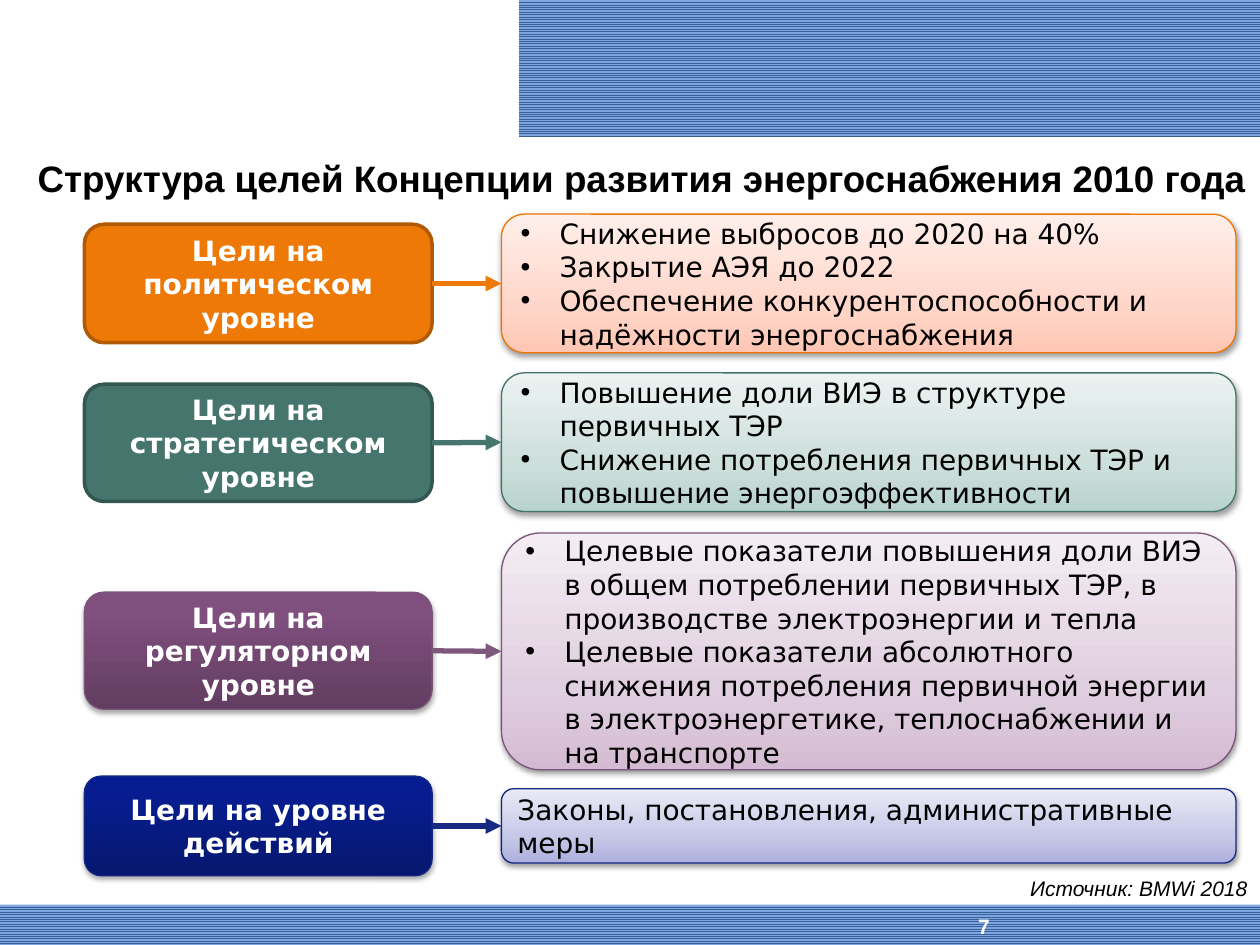
from lxml import etree
from pptx import Presentation
from pptx.dml.color import RGBColor
from pptx.enum.dml import MSO_PATTERN
from pptx.enum.shapes import MSO_CONNECTOR, MSO_SHAPE
from pptx.enum.text import MSO_ANCHOR, PP_ALIGN
from pptx.oxml.ns import qn
from pptx.util import Inches, Pt

RECT, ROUND = MSO_SHAPE.RECTANGLE, MSO_SHAPE.ROUNDED_RECTANGLE
LINE = MSO_CONNECTOR.STRAIGHT
STRIPES = MSO_PATTERN.NARROW_HORIZONTAL
LEFT, CENTER, RIGHT = PP_ALIGN.LEFT, PP_ALIGN.CENTER, PP_ALIGN.RIGHT
MIDDLE, TOP, BOTTOM = MSO_ANCHOR.MIDDLE, MSO_ANCHOR.TOP, MSO_ANCHOR.BOTTOM

COLORS = {"black": "000000", "white": "FFFFFF", "stripe": "386098", "sky": "80A6DF"}

# Label and goal boxes hold top and height; fills run from bottom to top.
LEVELS = [
    {"name": "Цели на политическом уровне", "label": (1.78, 0.94), "goal": (1.7, 1.1),
     "fill": [(0, "EE7906")], "edge": ("B05A04", 2), "arrow": "EE7906",
     "pale": [(0, "FFC6B4"), (35, "FFD7CA"), (100, "FFEFEB")], "rim": "EE7600",
     "bullet": True,
     "goals": ["Снижение выбросов до 2020 на 40%", "Закрытие АЭЯ до 2022",
               "Обеспечение конкурентоспособности и надёжности энергоснабжения"]},
    {"name": "Цели на стратегическом уровне", "label": (3.05, 0.93), "goal": (2.96, 1.1),
     "fill": [(0, "45756D")], "edge": ("335751", 2), "arrow": "45756D",
     "pale": [(0, "B8D3CD"), (35, "CDDFDB"), (100, "ECF3F2")], "rim": "42746B",
     "bullet": True,
     "goals": ["Повышение доли ВИЭ в структуре первичных ТЭР",
               "Снижение потребления первичных ТЭР и повышение энергоэффективности"]},
    {"name": "Цели на регуляторном уровне", "label": (4.7, 0.93), "goal": (4.23, 1.88),
     "fill": [(0, "623D61"), (80, "7F4F7D"), (100, "804E7F")],
     "edge": ("7B547A", 0.75), "arrow": "7D577C",
     "pale": [(0, "D4BBD3"), (35, "E0CFE0"), (100, "F4EDF3")], "rim": "7B547A",
     "bullet": True,
     "goals": ["Целевые показатели повышения доли ВИЭ в общем потреблении "
               "первичных ТЭР, в производстве электроэнергии и тепла",
               "Целевые показатели абсолютного снижения потребления первичной энергии "
               "в электроэнергетике, теплоснабжении и на транспорте"]},
    {"name": "Цели на уровне действий", "label": (6.16, 0.79), "goal": (6.26, 0.59),
     "fill": [(0, "05176E"), (80, "071D8F"), (100, "041C92")],
     "edge": ("142683", 0.75), "arrow": "172983",
     "pale": [(0, "ADAFDE"), (35, "C6C8E7"), (100, "E9EAF6")], "rim": "142683",
     "bullet": False,
     "goals": ["Законы, постановления, административные меры"]},
]


def write(shape, *texts, size=16, font="DejaVu Sans", color="black", bold=False,
          italic=False, align=LEFT, anchor=MIDDLE, bullet=False):
    """Fill a shape with one paragraph per text."""
    frame = shape.text_frame
    frame.word_wrap = True
    frame.vertical_anchor = anchor
    for i, text in enumerate(texts):
        para = frame.add_paragraph() if i else frame.paragraphs[0]
        para.alignment = align
        if bullet:
            props = para._p.get_or_add_pPr()
            props.set("marL", str(Inches(0.31)))
            props.set("indent", str(-Inches(0.31)))
            etree.SubElement(props, qn("a:buFont"), typeface="Arial")
            etree.SubElement(props, qn("a:buChar"), char="•")
        run = para.add_run()
        run.text = text
        run.font.size = Pt(size)
        run.font.name = font
        run.font.bold = bold
        run.font.italic = italic
        run.font.color.rgb = RGBColor.from_string(COLORS[color])


def paint(shape, stops, edge, width, alpha, drop):
    """Set fill and line; a gradient also gets a soft shadow below."""
    shape.line.color.rgb = RGBColor.from_string(edge)
    shape.line.width = Pt(width)
    shape.shadow.inherit = False
    if len(stops) == 1:
        shape.fill.solid()
        shape.fill.fore_color.rgb = RGBColor.from_string(stops[0][1])
        return
    shape.fill.gradient()
    shape.fill.gradient_angle = 90
    props = shape._element.spPr
    ramp = props.find(qn("a:gradFill")).find(qn("a:gsLst"))
    for old in list(ramp):
        ramp.remove(old)
    for pos, tint in stops:
        stop = etree.SubElement(ramp, qn("a:gs"), pos=str(pos * 1000))
        etree.SubElement(stop, qn("a:srgbClr"), val=tint)
    soft = etree.SubElement(props.find(qn("a:effectLst")), qn("a:outerShdw"),
                            blurRad=str(Pt(3.1)), dist=str(Pt(drop)),
                            dir="5400000", rotWithShape="0")
    shade = etree.SubElement(soft, qn("a:srgbClr"), val=COLORS["black"])
    etree.SubElement(shade, qn("a:alpha"), val=str(alpha * 1000))


deck = Presentation()
deck.slide_width, deck.slide_height = Inches(10), Inches(7.5)
slide = deck.slides.add_slide(deck.slide_layouts[6])
shapes = slide.shapes

for left, top, width, height in [(4.12, 0, 5.88, 1.08), (0, 7.18, 10, 0.32)]:
    band = shapes.add_shape(RECT, Inches(left), Inches(top), Inches(width), Inches(height))
    band.fill.patterned()
    band.fill.pattern = STRIPES
    band.fill.fore_color.rgb = RGBColor.from_string(COLORS["stripe"])
    band.fill.back_color.rgb = RGBColor.from_string(COLORS["sky"])
    band.line.fill.background()
    band.shadow.inherit = False

title = shapes.add_textbox(Inches(0.2), Inches(1.13), Inches(9.8), Inches(0.57))
title.text_frame.margin_right = 0
write(title, "Структура целей Концепции развития энергоснабжения 2010 года",
      size=21, font="Arial", bold=True)
page = shapes.add_textbox(Inches(7.33), Inches(7), Inches(0.96), Inches(0.5))
write(page, "7", size=12, font="Arial", color="white", bold=True,
      align=CENTER, anchor=BOTTOM)

for level in LEVELS:
    top, height = level["label"]
    label = shapes.add_shape(ROUND, Inches(0.67), Inches(top), Inches(2.76), Inches(height))
    paint(label, level["fill"], *level["edge"], alpha=35, drop=1.8)
    write(label, level["name"], color="white", bold=True, align=CENTER)

    top, height = level["goal"]
    goal = shapes.add_shape(ROUND, Inches(3.98), Inches(top), Inches(5.83), Inches(height))
    paint(goal, level["pale"], level["rim"], 0.75, alpha=38, drop=1.6)
    write(goal, *level["goals"], bullet=level["bullet"])

    arrow = shapes.add_connector(LINE, 0, 0, 0, 0)
    arrow.begin_connect(label, 3)
    arrow.end_connect(goal, 1)
    arrow.line.color.rgb = RGBColor.from_string(level["arrow"])
    arrow.line.width = Pt(3)
    props = arrow._element.spPr
    etree.SubElement(props.find(qn("a:ln")), qn("a:tailEnd"), type="triangle")
    etree.SubElement(props, qn("a:effectLst"))

source = shapes.add_textbox(Inches(3.58), Inches(6.9), Inches(6.42), Inches(0.3))
write(source, "Источник: BMWi 2018", size=12, font="Arial", italic=True,
      align=RIGHT, anchor=TOP)

deck.save("out.pptx")
